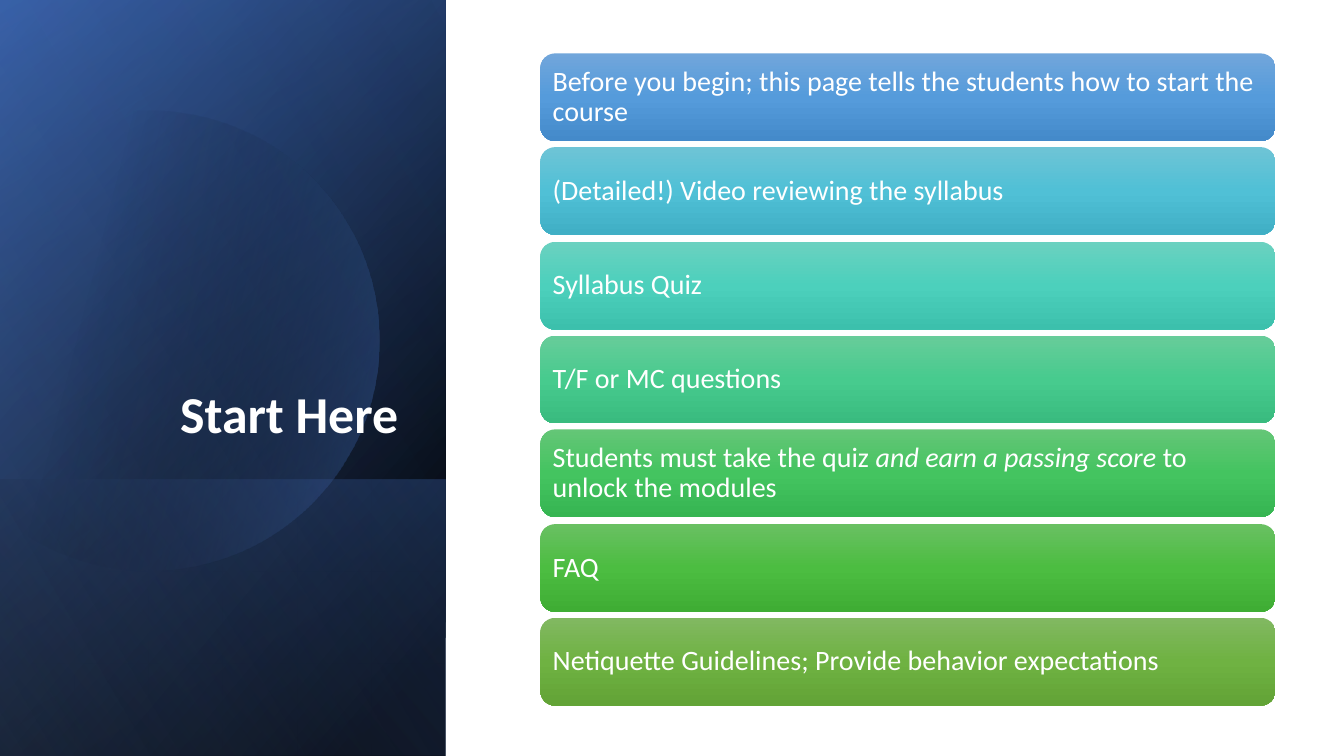
import math

from lxml import etree
from pptx import Presentation
from pptx.dml.color import RGBColor
from pptx.enum import shapes, text
from pptx.oxml.ns import qn
from pptx.util import Emu, Pt

PX = 9144  # EMU per px, 100 px to the inch

# place and size before the quarter turn, gradient angle,
# stops as (position, colour, opacity)
TALL = (-154, 154, 750, 442)
BASE_PANELS = [
    (TALL, 50, [(8, "000000", 100), (100, "2F5597", 100)]),
    (TALL, 30, [(0, "000000", 0), (99, "4472C4", 46)]),
    ((84, 392, 274, 442), 130, [(2, "4472C4", 29), (100, "000000", 30)]),
]
SHEEN = (TALL, 120, [(0, "000000", 0), (99, "8FAADC", 11)])
DISC_STOPS = [(29, "000000", 0), (100, "4472C4", 43)]

# spans of text (every second one is italic), then the gradient colours
STEPS = [
    (["Before you begin; this page tells the students how to start the course"],
     ["71A6DB", "559BDB", "448ACA"]),
    (["(Detailed!) Video reviewing the syllabus"], ["6EC4D6", "50C0D6", "40AFC5"]),
    (["Syllabus Quiz"], ["6AD1C0", "4CD0BC", "3CC0AC"]),
    (["T/F or MC questions"], ["67CC9A", "47CB8E", "39BB7F"]),
    (["Students must take the quiz ", "and earn a passing score ",
      "to unlock the modules"], ["64C677", "44C460", "36B552"]),
    (["FAQ"], ["69C062", "4CBD41", "3FAD34"]),
    (["Netiquette Guidelines; Provide behavior expectations"],
     ["81B861", "6FB242", "62A336"]),
]
STEP_TOP, STEP_PITCH = 53, 280 / 3


def px(length):
    return Emu(round(length * PX))


def colour(hex_code):
    return RGBColor.from_string(hex_code)


def add_span(para, words, size=20, bold=False, italic=False, ink="FFFFFF", font="Calibri"):
    span = para.add_run()
    span.text = words
    span.font.name = font
    span.font.size = Pt(size)
    span.font.bold = bold
    span.font.italic = italic
    span.font.color.rgb = colour(ink)


def shade(shape, angle, stops):
    """Fill with a linear gradient, its angle clockwise, and drop line and shadow."""
    shape.shadow.inherit = False
    shape.line.fill.background()
    shape.fill.gradient()
    shape.fill.gradient_angle = 360 - angle
    stop_list = shape._element.spPr.find(".//" + qn("a:gsLst"))
    for old in list(stop_list):
        stop_list.remove(old)
    for position, hex_code, opacity in stops:
        stop = etree.SubElement(stop_list, qn("a:gs"), pos=str(position * 1000))
        tint = etree.SubElement(stop, qn("a:srgbClr"), val=str(colour(hex_code)))
        if opacity < 100:
            etree.SubElement(tint, qn("a:alpha"), val=str(opacity * 1000))


class Page:
    """The current slide and the style of its parts."""

    def __init__(self, deck):
        self.slide = deck.slides.add_slide(deck.slide_layouts[5])
        self.shapes = self.slide.shapes

    def panel(self, place, angle, stops):
        """Mirrored rectangle on its side."""
        box = self.shapes.add_shape(shapes.MSO_SHAPE.RECTANGLE, *map(px, place))
        box.rotation = 90
        box._element.spPr.find(qn("a:xfrm")).set("flipH", "1")
        shade(box, angle, stops)

    def cut_disc(self, centre_x, centre_y, radius, left, angle, stops):
        """Disc cut off by an upright edge at left."""
        reach = math.acos((left - centre_x) / radius)
        count = 120
        turns = [reach * (2 * i / count - 1) for i in range(count + 1)]
        points = [(px(centre_x + radius * math.cos(turn)),
                   px(centre_y + radius * math.sin(turn))) for turn in turns]
        outline = self.shapes.build_freeform(*points[0], scale=1.0)
        outline.add_line_segments(points[1:], close=True)
        shade(outline.convert_to_shape(), angle, stops)

    def title(self, words, place):
        box = self.shapes.title
        box.left, box.top, box.width, box.height = map(px, place)
        frame = box.text_frame
        frame.word_wrap = True
        frame.auto_size = text.MSO_AUTO_SIZE.NONE
        frame.vertical_anchor = text.MSO_ANCHOR.BOTTOM
        para = frame.paragraphs[0]
        para.alignment = text.PP_ALIGN.RIGHT
        para.line_spacing = 0.9
        add_span(para, words, size=37, bold=True)
        self.shapes._spTree.append(box._element)  # bring to front

    def bar(self, place, spans, colours):
        box = self.shapes.add_shape(shapes.MSO_SHAPE.ROUNDED_RECTANGLE, *map(px, place))
        shade(box, 90, [(50 * i, tint, 100) for i, tint in enumerate(colours)])
        frame = box.text_frame
        frame.word_wrap = True
        frame.vertical_anchor = text.MSO_ANCHOR.MIDDLE
        frame.margin_left = frame.margin_right = px(8)
        frame.margin_top = frame.margin_bottom = px(8)
        para = frame.paragraphs[0]
        para.alignment = text.PP_ALIGN.LEFT
        para.line_spacing = 0.9
        for i, words in enumerate(spans):
            add_span(para, words, italic=i % 2 == 1)


def main():
    deck = Presentation()
    deck.slide_width, deck.slide_height = px(1333), px(750)
    page = Page(deck)
    for panel in BASE_PANELS:
        page.panel(*panel)
    page.cut_disc(148, 338, 228, left=-15, angle=14, stops=DISC_STOPS)
    page.panel(*SHEEN)
    page.title("Start Here", (64, 184, 341, 262))
    for i, (spans, colours) in enumerate(STEPS):
        page.bar((536, round(STEP_TOP + i * STEP_PITCH), 729, 87), spans, colours)
    deck.save("out.pptx")


if __name__ == "__main__":
    main()
